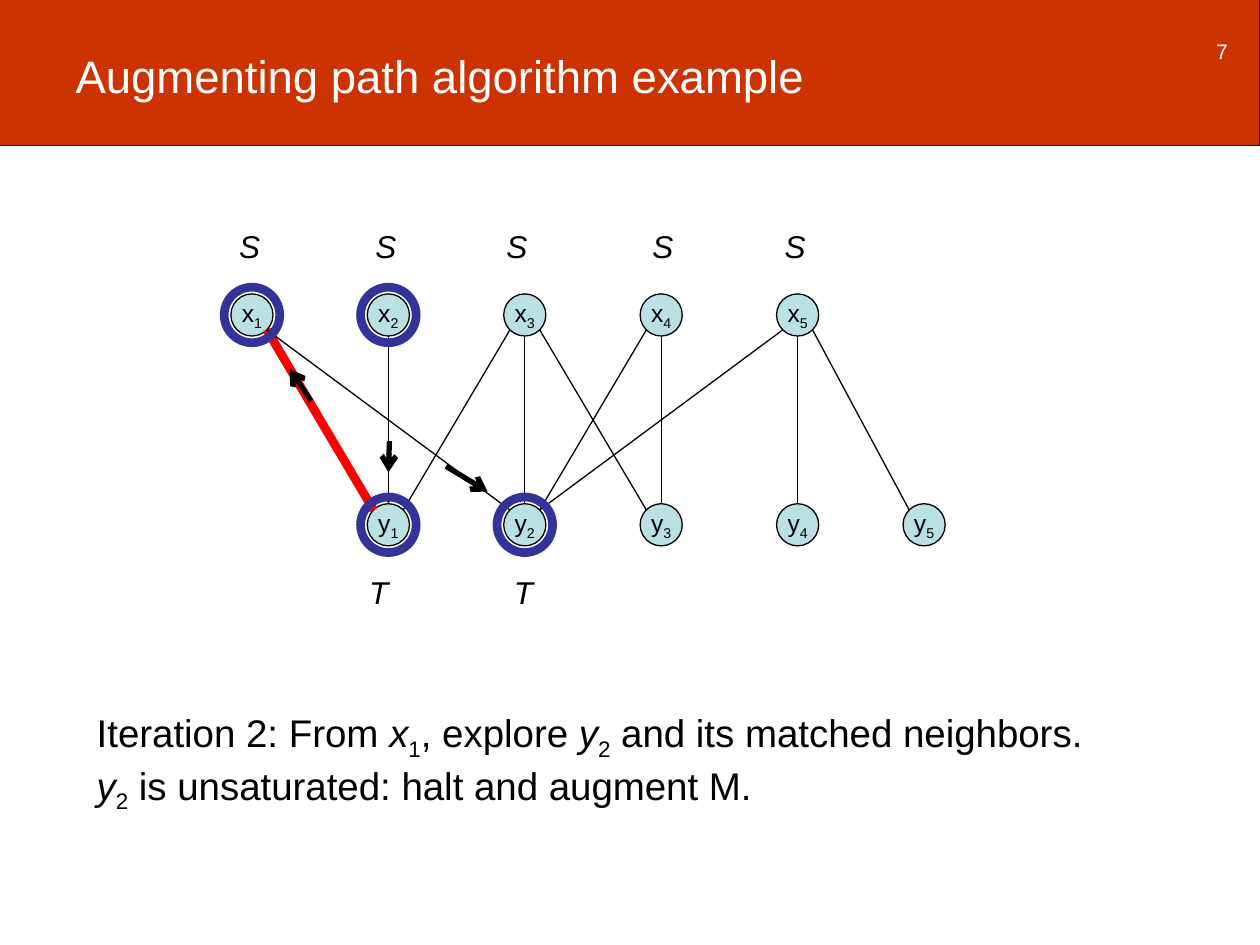
import pptx
import pptx.dml.color
import pptx.enum.shapes
import pptx.enum.text
import pptx.oxml
import pptx.oxml.ns
import pptx.util
from pptx.dml.color import RGBColor
from pptx.util import Cm

BANNER_RED = RGBColor(0xCC, 0x33, 0x00)
NODE_BLUE = RGBColor(0xBB, 0xE0, 0xE3)
RING_BLUE = RGBColor(0x33, 0x33, 0x99)
MATCHING_RED = RGBColor(0xFF, 0x00, 0x00)
BLACK = RGBColor(0x00, 0x00, 0x00)
WHITE = RGBColor(0xFF, 0xFF, 0xFF)

FONT = "Arial"
NODE_SIZE = 0.85
RING_SIZE = 1.12
DIAGONAL = 0.3  # offset of an edge end on the 45° point of a node
ROW_Y = {"x": 6.35, "y": 10.58}
COLUMNS = [5.08 + 2.75 * index for index in range(5)] + [18.63]
NODES = {f"x{number}": (COLUMNS[number - 1], ROW_Y["x"]) for number in range(1, 6)}
NODES.update({f"y{number}": (COLUMNS[number], ROW_Y["y"]) for number in range(1, 6)})

EDGES = ["x1 y2", "x2 y1", "x3 y1", "x3 y2", "x3 y3", "x5 y2",
         "x4 y2", "x4 y3", "x5 y4", "x5 y5"]
EXPLORED = ["x2", "y1", "x1", "y2"]
DIRECTIONS = [(7.85, 8.89, 7.83, 9.52), (6.27, 8.08, 5.84, 7.44), (8.99, 9.4, 9.83, 9.91)]
SET_LABELS = {
    "S": (4.45, [4.57, 7.32, 9.96, 12.9, 15.57]),
    "T": (11.43, [7.19, 10.11]),
}
EXPLANATION = [
    [("Iteration 2: From ", ""), ("x", "italic"), ("1", "sub"), (", explore ", ""),
     ("y", "italic"), ("2", "sub"), (" and its matched neighbors.", "")],
    [("y", "italic"), ("2", "sub"), (" is unsaturated: halt and augment M.", "")],
]


def add_runs(paragraph, pieces, size, color=BLACK):
    """Add (text, style) pieces; a style is "", "italic" or "sub"."""
    for text, style in pieces:
        run = paragraph.add_run()
        run.text = text
        run.font.name = FONT
        run.font.size = pptx.util.Pt(size)
        run.font.color.rgb = color
        if style == "italic":
            run.font.italic = True
        elif style == "sub":
            run.font._element.set("baseline", "-25000")


def add_filled_shape(slide, kind, left, top, width, height, fill, line_color, line_width):
    shape = slide.shapes.add_shape(kind, Cm(left), Cm(top), Cm(width), Cm(height))
    shape.shadow.inherit = False
    if fill is None:
        shape.fill.background()
    else:
        shape.fill.solid()
        shape.fill.fore_color.rgb = fill
    shape.line.color.rgb = line_color
    shape.line.width = pptx.util.Pt(line_width)
    return shape


def add_circle(slide, center, size, fill, line_color, line_width):
    left, top = (value - size / 2 for value in center)
    return add_filled_shape(slide, pptx.enum.shapes.MSO_SHAPE.OVAL, left, top,
                            size, size, fill, line_color, line_width)


def add_node(slide, name):
    node = add_circle(slide, NODES[name], NODE_SIZE, NODE_BLUE, BLACK, 0.75)
    frame = node.text_frame
    frame.margin_left = frame.margin_right = frame.margin_top = frame.margin_bottom = 0
    frame.vertical_anchor = pptx.enum.text.MSO_ANCHOR.MIDDLE
    frame.word_wrap = False
    paragraph = frame.paragraphs[0]
    paragraph.alignment = pptx.enum.text.PP_ALIGN.CENTER
    add_runs(paragraph, [(name[0], ""), (name[1], "sub")], 14)


def add_line(slide, ends, color, width, arrowhead=None):
    line = slide.shapes.add_connector(
        pptx.enum.shapes.MSO_CONNECTOR.STRAIGHT, *(Cm(value) for value in ends))
    line.line.color.rgb = color
    line.line.width = pptx.util.Pt(width)
    if arrowhead:
        tail = pptx.oxml.parse_xml(
            f'<a:tailEnd {pptx.oxml.ns.nsdecls("a")} type="{arrowhead}"/>')
        line.line._get_or_add_ln().append(tail)
    line._element.spPr.append(
        pptx.oxml.parse_xml(f'<a:effectLst {pptx.oxml.ns.nsdecls("a")}/>'))


def add_edge(slide, edge, color=BLACK, width=0.75, arrowhead=None):
    """Join the facing sides of an x node and a y node."""
    (x_start, y_start), (x_end, y_end) = (NODES[name] for name in edge.split())
    if x_start == x_end:
        shift, drop = 0, NODE_SIZE / 2
    else:
        shift, drop = (DIAGONAL if x_end > x_start else -DIAGONAL), DIAGONAL
    ends = (x_start + shift, y_start + drop, x_end - shift, y_end - drop)
    add_line(slide, ends, color, width, arrowhead)


def add_text(slide, left, top, width, height, paragraphs, size, color=BLACK, wrap=True):
    box = slide.shapes.add_textbox(Cm(left), Cm(top), Cm(width), Cm(height))
    frame = box.text_frame
    frame.word_wrap = wrap
    for index, pieces in enumerate(paragraphs):
        paragraph = frame.add_paragraph() if index else frame.paragraphs[0]
        add_runs(paragraph, pieces, size, color)
    return frame


def add_header(slide):
    banner = add_filled_shape(slide, pptx.enum.shapes.MSO_SHAPE.RECTANGLE,
                              -0.03, -0.03, 25.43, 2.97, BANNER_RED, BLACK, 0.75)
    slide.shapes._spTree.insert(2, banner._element)  # behind the title

    title = slide.shapes.title
    title.left, title.top, title.width, title.height = Cm(1.27), Cm(0.85), Cm(19.25), Cm(2.54)
    title.text_frame.auto_size = pptx.enum.text.MSO_AUTO_SIZE.NONE
    title.text_frame.vertical_anchor = pptx.enum.text.MSO_ANCHOR.TOP
    paragraph = title.text_frame.paragraphs[0]
    paragraph.alignment = pptx.enum.text.PP_ALIGN.LEFT
    add_runs(paragraph, [("Augmenting path algorithm example", "")], 26, WHITE)

    number = add_text(slide, 23.93, 0.38, 1.07, 1.32, [[("7", "")]], 12, WHITE)
    number.vertical_anchor = pptx.enum.text.MSO_ANCHOR.MIDDLE
    number.paragraphs[0].alignment = pptx.enum.text.PP_ALIGN.RIGHT


def add_graph(slide):
    for name in NODES:
        add_node(slide, name)
    add_edge(slide, "x1 y1", MATCHING_RED, 5)
    for edge in EDGES:
        add_edge(slide, edge, arrowhead="stealth" if edge == "x2 y1" else None)
    for name in EXPLORED:
        add_circle(slide, NODES[name], RING_SIZE, None, RING_BLUE, 5)
    for ends in DIRECTIONS:
        add_line(slide, ends, BLACK, 3, "arrow")
    for label, (top, lefts) in SET_LABELS.items():
        for left in lefts:
            add_text(slide, left, top, 0.93, 1.02, [[(label, "italic")]], 18, wrap=False)


def main():
    presentation = pptx.Presentation()
    presentation.slide_width, presentation.slide_height = Cm(25.4), Cm(19.05)
    slide = presentation.slides.add_slide(presentation.slide_layouts[5])
    add_header(slide)
    add_graph(slide)
    add_text(slide, 1.7, 14.17, 20.52, 2.77, EXPLANATION, 22)
    presentation.save("out.pptx")


if __name__ == "__main__":
    main()
